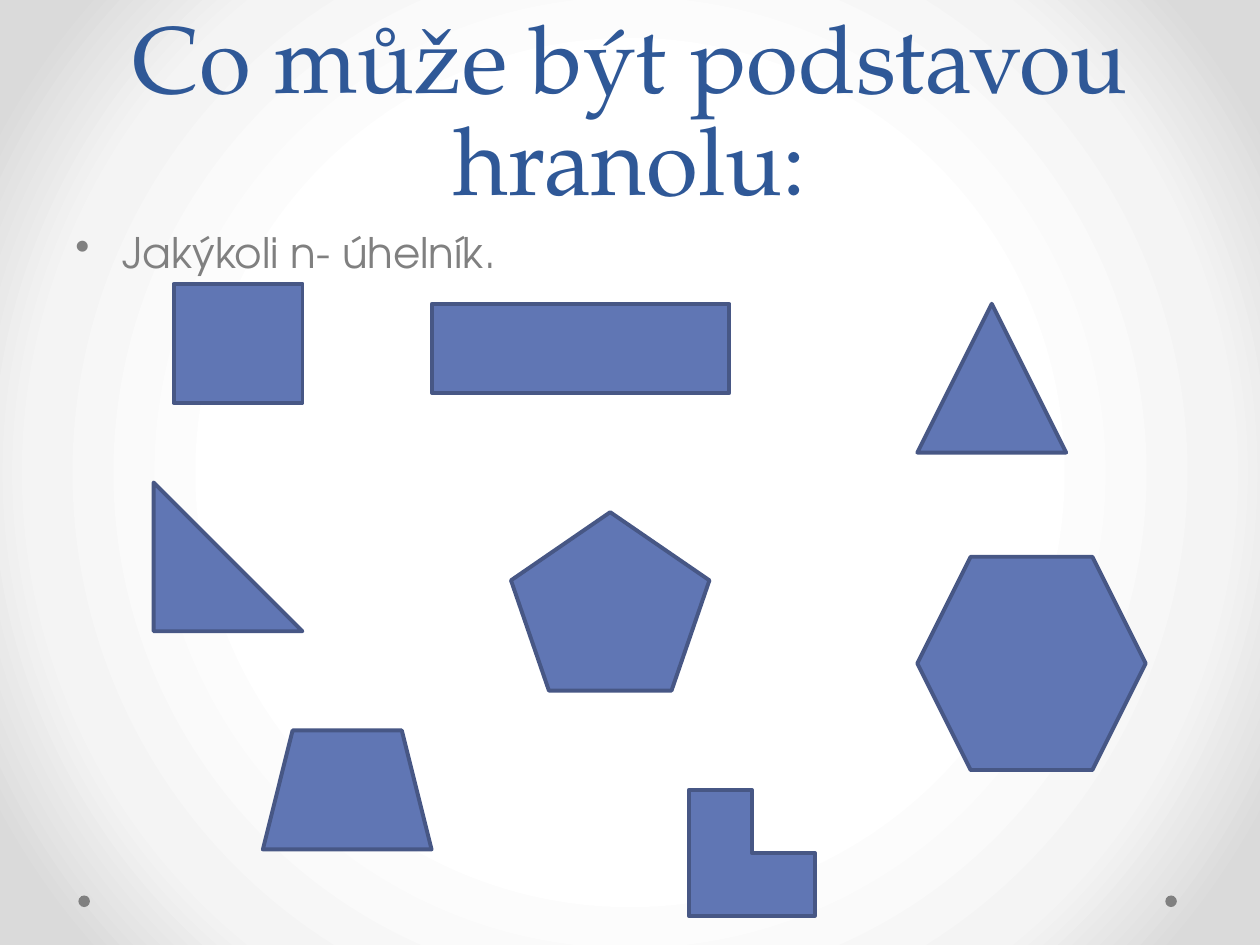
import pptx
import pptx.util
import pptx.oxml
import pptx.oxml.ns
import pptx.dml.color
import pptx.enum.shapes
import pptx.enum.text
from dataclasses import dataclass

Pt = pptx.util.Pt
Kind = pptx.enum.shapes.MSO_SHAPE
Align = pptx.enum.text.PP_ALIGN
Anchor = pptx.enum.text.MSO_ANCHOR


@dataclass(frozen=True)
class Theme:
    title: str = "2F5897"
    gray: str = "808080"
    fill: str = "6076B4"
    edge: str = "475785"
    stops: tuple = ((50, "FFFFFF"), (76, "F4F4F4"), (92, "DADADA"))
    serif: str = "TeX Gyre Pagella"
    sans: str = "TeX Gyre Adventor"
    large: float = 54
    body: float = 24
    line: float = 2.25


theme = Theme()


def color(code):
    return pptx.dml.color.RGBColor.from_string(code)


def add_text(slide, box, text, *, font, size, ink, align=Align.LEFT,
             anchor=Anchor.TOP, lead=None, before=0, bullet=None, indent=0):
    frame = slide.shapes.add_textbox(*map(Pt, box)).text_frame
    frame.word_wrap = True
    frame.vertical_anchor = anchor
    para = frame.paragraphs[0]
    para.alignment = align
    para.space_before = Pt(before)
    if lead:
        para.line_spacing = Pt(lead)
    run = para.add_run()
    run.text = text
    run.font.name = font
    run.font.size = Pt(size)
    run.font.color.rgb = color(ink)
    if bullet:
        props = para._p.get_or_add_pPr()
        props.set("marL", str(Pt(indent)))
        props.set("indent", str(-Pt(indent)))
        props.append(pptx.oxml.parse_xml(
            f'<a:buChar {pptx.oxml.ns.nsdecls("a")} char="{bullet}"/>'))


def add_form(slide, kind, box, fill, edge=None):
    form = slide.shapes.add_shape(kind, *map(Pt, box))
    form.shadow.inherit = False
    form.fill.solid()
    form.fill.fore_color.rgb = color(fill)
    if edge:
        form.line.color.rgb = color(edge)
        form.line.width = Pt(theme.line)
    else:
        form.line.fill.background()


def add_back(slide):
    stops = "".join(
        f'<a:gs pos="{place * 1000}"><a:srgbClr val="{code}"/></a:gs>'
        for place, code in theme.stops)
    slide.element.cSld.insert(0, pptx.oxml.parse_xml(
        f'<p:bg {pptx.oxml.ns.nsdecls("p", "a")}><p:bgPr>'
        f'<a:gradFill rotWithShape="1"><a:gsLst>{stops}</a:gsLst>'
        '<a:path path="circle"><a:fillToRect l="50000" t="50000" '
        'r="50000" b="50000"/></a:path></a:gradFill>'
        '<a:effectLst/></p:bgPr></p:bg>'))


def add_dots(slide, box):
    # Small dots at both ends of the footer
    left, top, width, size = box
    for x in (left + width - size, left):
        add_form(slide, Kind.OVAL, (x, top, size, size), theme.gray)


def add_head(slide, box):
    add_text(slide, box, "Co může být podstavou hranolu:",
             font=theme.serif, size=theme.large, ink=theme.title,
             align=Align.CENTER, anchor=Anchor.BOTTOM, lead=58)


def add_body(slide, box):
    add_text(slide, box, "Jakýkoli n- úhelník.",
             font=theme.sans, size=theme.body, ink=theme.gray,
             before=4.8, bullet="•", indent=27)


def add_bases(slide, box):
    # Polygons, placed from the top left of the box
    left, top = box[:2]
    forms = (
        (Kind.RECTANGLE, 11.4, 0, 73.7, 68),
        (Kind.RECTANGLE, 159, 11.4, 170, 51),
        (Kind.ISOSCELES_TRIANGLE, 436.4, 11.4, 85, 85),
        (Kind.RIGHT_TRIANGLE, 0, 113.5, 85, 85),
        (Kind.REGULAR_PENTAGON, 204.2, 130.5, 113.4, 102),
        (Kind.HEXAGON, 436.4, 156, 130.5, 121.9),
        (Kind.TRAPEZOID, 62.4, 255.2, 96.4, 68),
        (Kind.from_xml("corner"), 305.8, 289.2, 72, 72),
    )
    for kind, x, y, width, height in forms:
        add_form(slide, kind, (left + x, top + y, width, height),
                 theme.fill, theme.edge)


def main():
    deck = pptx.Presentation()
    deck.slide_width, deck.slide_height = Pt(720), Pt(540)
    slide = deck.slides.add_slide(deck.slide_layouts[6])
    add_back(slide)
    add_dots(slide, (44.8, 511.7, 627.7, 6.6))
    add_head(slide, (36, 0, 648, 126))
    add_body(slide, (36, 126, 648, 356.4))
    add_bases(slide, (87.8, 162.2, 567, 361.2))
    deck.save("out.pptx")


if __name__ == "__main__":
    main()
